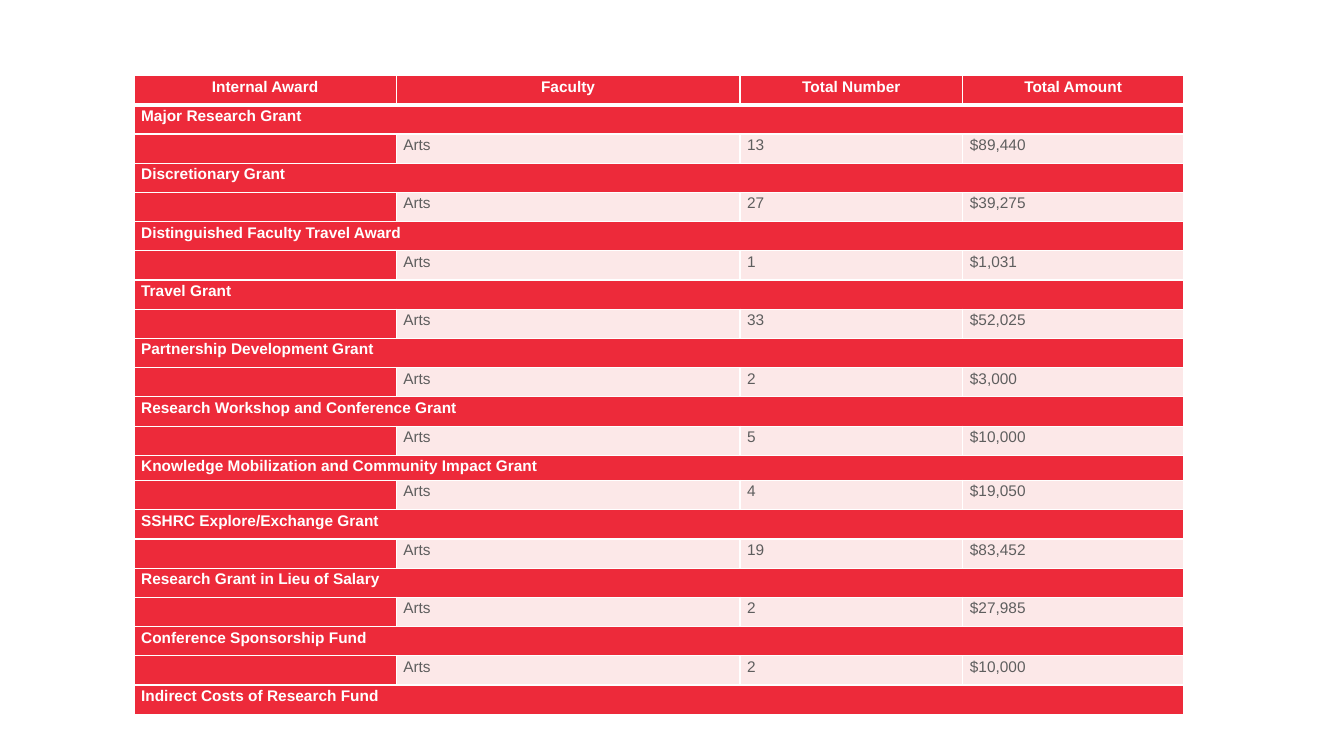
from dataclasses import dataclass

from lxml.etree import SubElement
from pptx import Presentation
from pptx.dml.color import RGBColor
from pptx.enum.text import PP_ALIGN
from pptx.oxml.ns import qn
from pptx.util import Inches, Pt


@dataclass(frozen=True)
class Theme:
    font: str = "Arial"
    size: float = 11
    line_spacing: float = 1.15
    red: str = "ED2A3A"
    pink: str = "FCE8E8"
    white: str = "FFFFFF"
    grey: str = "5E5E5E"
    thin: float = 1
    thick: float = 3


HEADERS = ["Internal Award", "Faculty", "Total Number", "Total Amount"]
AWARDS = [
    ("Major Research Grant", ["Arts", "13", "$89,440"]),
    ("Discretionary Grant", ["Arts", "27", "$39,275"]),
    ("Distinguished Faculty Travel Award", ["Arts", "1", "$1,031"]),
    ("Travel Grant", ["Arts", "33", "$52,025"]),
    ("Partnership Development Grant", ["Arts", "2", "$3,000"]),
    ("Research Workshop and Conference Grant", ["Arts", "5", "$10,000"]),
    ("Knowledge Mobilization and Community Impact Grant", ["Arts", "4", "$19,050"]),
    ("SSHRC Explore/Exchange Grant", ["Arts", "19", "$83,452"]),
    ("Research Grant in Lieu of Salary", ["Arts", "2", "$27,985"]),
    ("Conference Sponsorship Fund", ["Arts", "2", "$10,000"]),
    ("Indirect Costs of Research Fund", None),
]
COLUMN_WIDTHS = [2.6, 3.41, 2.21, 2.19]
ROW_HEIGHT = 0.29
SHORT_ROW, SHORT_HEIGHT = 13, 0.25


class SlideBuilder:
    def __init__(self, deck, theme):
        self.theme = theme
        self.slide = deck.slides.add_slide(deck.slide_layouts[6])

    def add_borders(self, cell, top, bottom):
        thin = self.theme.thin
        properties = cell._tc.get_or_add_tcPr()
        for side, width in (("L", thin), ("R", thin), ("T", top), ("B", bottom)):
            line = SubElement(properties, qn(f"a:ln{side}"), w=str(Pt(width)))
            fill = SubElement(line, qn("a:solidFill"))
            SubElement(fill, qn("a:srgbClr"), val=self.theme.white)

    def format_cell(self, cell, text, row, column, is_detail):
        theme = self.theme
        plain = is_detail and column > 0

        # Borders, fill and margins
        self.add_borders(cell,
                         theme.thick if row == 1 else theme.thin,
                         theme.thick if row == 0 else theme.thin)
        cell.fill.solid()
        cell.fill.fore_color.rgb = RGBColor.from_string(theme.pink if plain else theme.red)
        cell.margin_left = cell.margin_right = Inches(0.07)
        cell.margin_top = cell.margin_bottom = 0

        # Text
        para = cell.text_frame.paragraphs[0]
        para.text = text
        para.alignment = PP_ALIGN.CENTER if row == 0 else PP_ALIGN.JUSTIFY
        para.line_spacing = theme.line_spacing
        for span in para.runs:
            span.font.name = theme.font
            span.font.size = Pt(theme.size)
            span.font.bold = not plain
            span.font.color.rgb = RGBColor.from_string(theme.grey if plain else theme.white)
        if not text:
            SubElement(para._p, qn("a:endParaRPr"), sz=str(int(theme.size * 100)))

    def add_award_table(self, left, top):
        # Each award has a full-width heading row and, if awarded, a detail row
        rows = [(HEADERS, False)]
        for award, details in AWARDS:
            rows.append(([award, "", "", ""], False))
            if details:
                rows.append((["", *details], True))

        heights = [SHORT_HEIGHT if row == SHORT_ROW else ROW_HEIGHT
                   for row in range(len(rows))]
        table = self.slide.shapes.add_table(
            len(rows), len(HEADERS), Inches(left), Inches(top),
            Inches(sum(COLUMN_WIDTHS)), Inches(sum(heights))).table
        for column, width in zip(table.columns, COLUMN_WIDTHS):
            column.width = Inches(width)

        for row, (texts, is_detail) in enumerate(rows):
            table.rows[row].height = Inches(heights[row])
            for column, text in enumerate(texts):
                self.format_cell(table.cell(row, column), text, row, column, is_detail)
            if row > 0 and not is_detail:
                table.cell(row, 0).merge(table.cell(row, len(HEADERS) - 1))


def main():
    deck = Presentation()
    deck.slide_width, deck.slide_height = Inches(13.33), Inches(7.5)
    page = SlideBuilder(deck, Theme())
    page.add_award_table(1.33, 0.75)
    deck.save("out.pptx")


if __name__ == "__main__":
    main()
